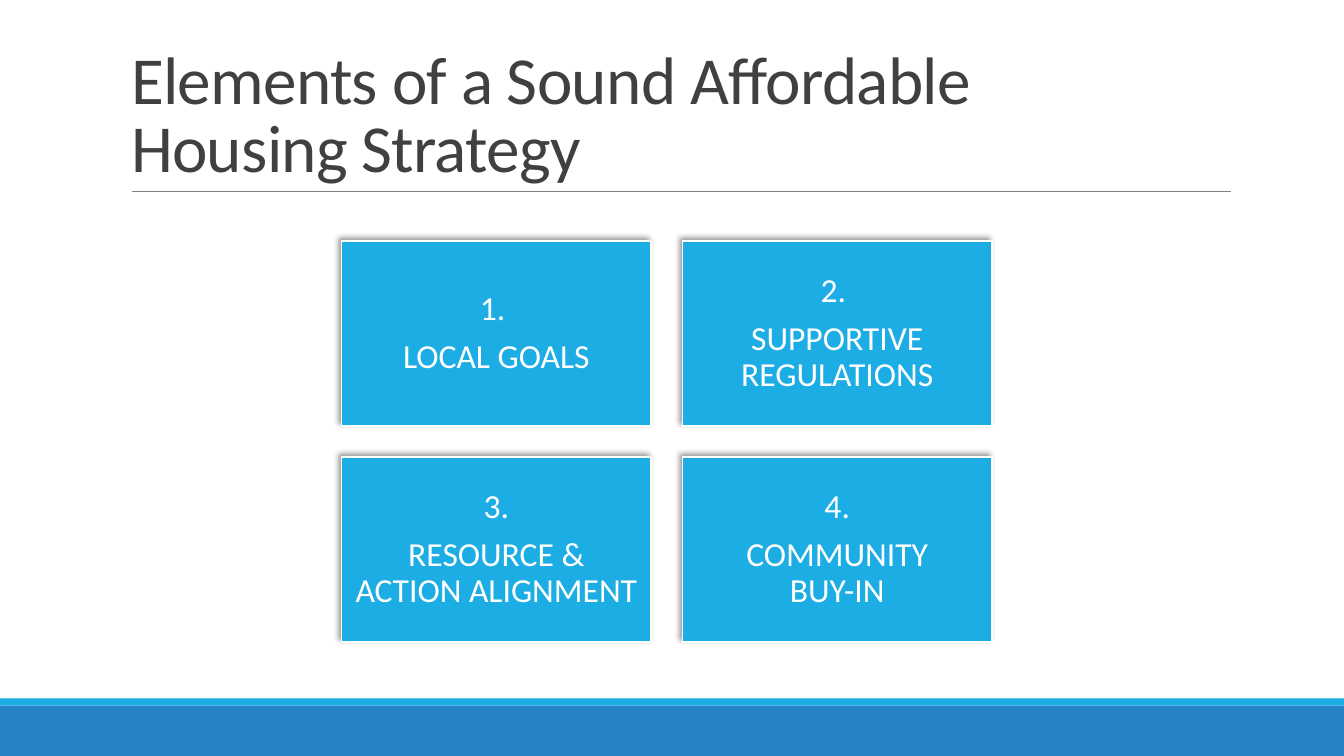
"""Builds the slide on the four elements of a sound affordable housing strategy."""
import lxml.etree
import pptx
import pptx.dml.color
import pptx.enum.shapes
import pptx.enum.text
import pptx.oxml.ns
import pptx.util

Cm = pptx.util.Cm
Pt = pptx.util.Pt
Align = pptx.enum.text.PP_ALIGN
Anchor = pptx.enum.text.MSO_ANCHOR

TITLE = "Elements of a Sound Affordable Housing Strategy"
ELEMENTS = [
    ("1. ", "LOCAL GOALS", 0.25),
    ("2. ", "SUPPORTIVE REGULATIONS", 0.25),
    ("3.", "RESOURCE & ACTION ALIGNMENT", 0.25),
    ("4.", "COMMUNITY BUY-IN", 0.76),
]
FOOTER_BANDS = [(17.78, 1.27, "2683C6"), (17.6, 0.18, "1CADE4")]
PAGE_WIDTH, PAGE_HEIGHT = 33.87, 19.05
COLUMNS = 2
GRID_LEFT, GRID_TOP = 8.61, 6.07
CARD_WIDTH, CARD_HEIGHT = 7.8, 4.67
STEP_X, STEP_Y = 8.59, 5.44
SHADOW = {"blurRad": Pt(4), "dist": Pt(3), "dir": 225 * 60000, "algn": "br", "rotWithShape": 0}


def colour(value):
    return pptx.dml.color.RGBColor.from_string(value)


def apply(target, **values):
    for name, value in values.items():
        setattr(target, name, value)


def add_child(parent, tag, **values):
    child = lxml.etree.SubElement(parent, pptx.oxml.ns.qn(tag))
    for name, value in values.items():
        child.set(name, str(value))
    return child


def write(para, text, size, ink):
    span = para.add_run()
    span.text = text
    apply(span.font, name="Calibri", size=Pt(size))
    span.font.color.rgb = colour(ink)
    return span


def add_box(page, left, top, width, height, fill):
    box = page.shapes.add_shape(
        pptx.enum.shapes.MSO_SHAPE.RECTANGLE, Cm(left), Cm(top), Cm(width), Cm(height))
    box.shadow.inherit = False
    box.fill.solid()
    box.fill.fore_color.rgb = colour(fill)
    box.line.fill.background()
    return box


def add_title(page):
    title = page.shapes.title
    apply(title, left=Cm(3.05), top=Cm(0.79), width=Cm(24.54), height=Cm(4.04))
    apply(title.text_frame, word_wrap=True, vertical_anchor=Anchor.BOTTOM,
          auto_size=pptx.enum.text.MSO_AUTO_SIZE.NONE)
    para = title.text_frame.paragraphs[0]
    apply(para, alignment=Align.LEFT, line_spacing=0.85)
    span = write(para, TITLE, 48, "404040")
    span.font._element.set("spc", "-50")


def add_rule(page):
    rule = page.shapes.add_connector(
        pptx.enum.shapes.MSO_CONNECTOR.STRAIGHT, Cm(3.33), Cm(4.83), Cm(31.01), Cm(4.83))
    rule.line.width = Pt(0.5)
    rule.line.color.rgb = colour("808080")
    add_child(rule._element.spPr, "a:effectLst")


def add_card(page, index, number, label, side_inset):
    row, column = divmod(index, COLUMNS)
    card = add_box(page, GRID_LEFT + column * STEP_X, GRID_TOP + row * STEP_Y,
                   CARD_WIDTH, CARD_HEIGHT, "1CADE4")
    card.line.width = Pt(1.25)
    card.line.color.rgb = colour("FFFFFF")
    effects = card._element.spPr.find(pptx.oxml.ns.qn("a:effectLst"))
    shadow = add_child(effects, "a:outerShdw", **SHADOW)
    add_child(add_child(shadow, "a:srgbClr", val="000000"), "a:alpha", val=40000)
    frame = card.text_frame
    apply(frame, word_wrap=True, vertical_anchor=Anchor.MIDDLE,
          margin_left=Cm(side_inset), margin_right=Cm(side_inset),
          margin_top=Cm(0.25), margin_bottom=Cm(0.25))
    for para, text in ((frame.paragraphs[0], number), (frame.add_paragraph(), label)):
        apply(para, alignment=Align.CENTER, line_spacing=0.9, space_after=Pt(8.4))
        write(para, text, 24, "FFFFFF")


def main():
    deck = pptx.Presentation()
    apply(deck, slide_width=Cm(PAGE_WIDTH), slide_height=Cm(PAGE_HEIGHT))
    page = deck.slides.add_slide(deck.slide_layouts[5])
    for top, height, fill in FOOTER_BANDS:
        add_box(page, 0, top, PAGE_WIDTH, height, fill)
    add_rule(page)
    add_title(page)
    for index, element in enumerate(ELEMENTS):
        add_card(page, index, *element)
    deck.save("out.pptx")


if __name__ == "__main__":
    main()
